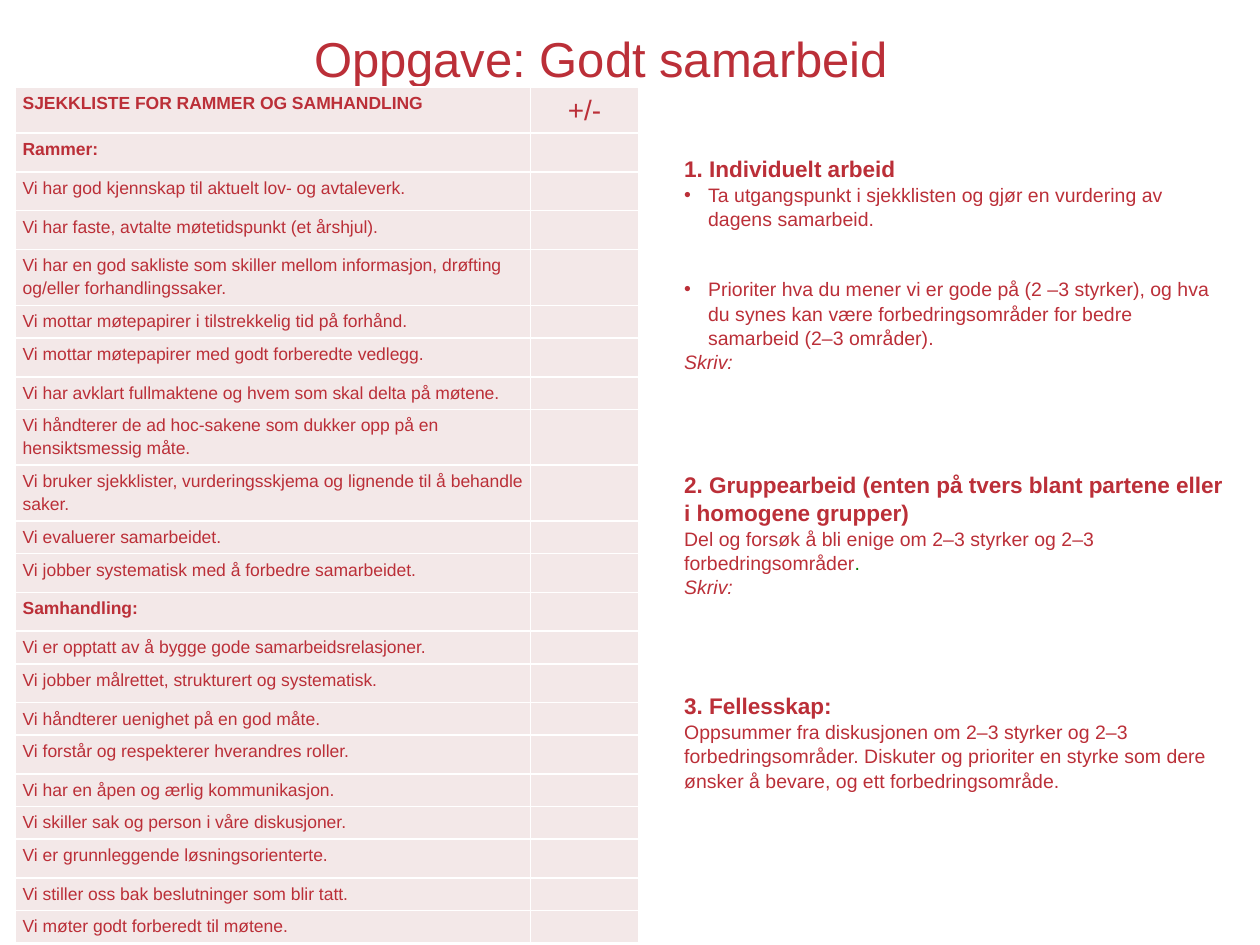
from lxml import etree
from pptx import Presentation, util as u
from pptx.dml.color import RGBColor
from pptx.enum import shapes, text
from pptx.oxml.ns import qn

THEME = {
    "font": "Arial", "red": "BB2F38", "green": "008000",
    "tint": "F3E8E8", "white": "FFFFFF",
    "title": 28, "mark": 16, "head": 12.9, "body": 11.1, "cell": 10,
}

TITLE = "Oppgave: Godt samarbeid"

# Relative row heights
TOP, ROOMY, TIGHT, DOUBLE = 0.34, 0.31, 0.26, 0.41
COLS = (4.09, 0.86)
HIGH = 6.66

# (text, row height, bold)
CHECKS = [
    ("SJEKKLISTE FOR RAMMER OG SAMHANDLING", TOP, True),
    ("Rammer:", ROOMY, True),
    ("Vi har god kjennskap til aktuelt lov- og avtaleverk.", ROOMY, False),
    ("Vi har faste, avtalte møtetidspunkt (et årshjul).", ROOMY, False),
    ("Vi har en god sakliste som skiller mellom informasjon, drøfting "
     "og/eller forhandlingssaker.", DOUBLE, False),
    ("Vi mottar møtepapirer i tilstrekkelig tid på forhånd.", TIGHT, False),
    ("Vi mottar møtepapirer med godt forberedte vedlegg.", ROOMY, False),
    ("Vi har avklart fullmaktene og hvem som skal delta på møtene.", TIGHT, False),
    ("Vi håndterer de ad hoc-sakene som dukker opp på en "
     "hensiktsmessig måte.", DOUBLE, False),
    ("Vi bruker sjekklister, vurderingsskjema og lignende til å behandle "
     "saker.", DOUBLE, False),
    ("Vi evaluerer samarbeidet.", TIGHT, False),
    ("Vi jobber systematisk med å forbedre samarbeidet.", ROOMY, False),
    ("Samhandling:", ROOMY, True),
    ("Vi er opptatt av å bygge gode samarbeidsrelasjoner.", TIGHT, False),
    ("Vi jobber målrettet, strukturert og systematisk.", ROOMY, False),
    ("Vi håndterer uenighet på en god måte.", TIGHT, False),
    ("Vi forstår og respekterer hverandres roller.", ROOMY, False),
    ("Vi har en åpen og ærlig kommunikasjon.", TIGHT, False),
    ("Vi skiller sak og person i våre diskusjoner.", TIGHT, False),
    ("Vi er grunnleggende løsningsorienterte.", ROOMY, False),
    ("Vi stiller oss bak beslutninger som blir tatt.", TIGHT, False),
    ("Vi møter godt forberedt til møtene.", TIGHT, False),
]

# (kind, space before in points, [(text, colour)])
TASKS = [
    ("head", 0, [("1. Individuelt arbeid", "red")]),
    ("bullet", 0, [("Ta utgangspunkt i sjekklisten og gjør en vurdering av "
                    "dagens samarbeid.", "red")]),
    ("bullet", 26.5, [("Prioriter hva du mener vi er gode på (2 –3 styrker), og "
                       "hva du synes kan være forbedringsområder for bedre "
                       "samarbeid (2–3 områder).", "red")]),
    ("write", 0, [("Skriv:", "red")]),
    ("head", 55, [("2. Gruppearbeid (enten på tvers blant partene eller i "
                   "homogene grupper)", "red")]),
    ("plain", 0, [("Del og forsøk å bli enige om 2–3 styrker og 2–3 "
                   "forbedringsområder", "red"), (".", "green")]),
    ("write", 0, [("Skriv:", "red")]),
    ("head", 53, [("3. Fellesskap:", "red")]),
    ("plain", 0, [("Oppsummer fra diskusjonen om 2–3 styrker og 2–3 "
                   "forbedringsområder. Diskuter og prioriter en styrke som "
                   "dere ønsker å bevare, og ett forbedringsområde.", "red")]),
]


def tone(name):
    return RGBColor.from_string(THEME[name])


def add_run(para, words, size, color="red", bold=False, slant=False):
    run = para.add_run()
    run.text = words
    font = run.font
    font.name, font.size = THEME["font"], u.Pt(THEME[size])
    font.bold, font.italic = bold, slant
    font.color.rgb = tone(color)


def add_bullet(para):
    props = para._p.get_or_add_pPr()
    props.set("marL", str(u.Inches(0.19)))
    props.set("indent", str(-u.Inches(0.19)))
    etree.SubElement(props, qn("a:buFont")).set("typeface", THEME["font"])
    etree.SubElement(props, qn("a:buChar")).set("char", "•")


def add_edges(cell):
    """Draw a white 1 pt line on all four sides, beneath the fill in the XML."""
    props = cell._tc.get_or_add_tcPr()
    for spot, side in enumerate(("a:lnL", "a:lnR", "a:lnT", "a:lnB")):
        line = etree.Element(qn(side), w=str(u.Pt(1)))
        fill = etree.SubElement(line, qn("a:solidFill"))
        etree.SubElement(fill, qn("a:srgbClr")).set("val", THEME["white"])
        props.insert(spot, line)


def fill_cell(cell, words, size="cell", bold=False):
    cell.margin_left = cell.margin_right = u.Inches(0.06)
    cell.margin_top = cell.margin_bottom = u.Inches(0.03)
    cell.fill.solid()
    cell.fill.fore_color.rgb = tone("tint")
    add_edges(cell)
    para = cell.text_frame.paragraphs[0]
    if words:
        para.line_spacing = 1.15
        add_run(para, words, size, bold=bold)
    else:
        end = etree.SubElement(para._p, qn("a:endParaRPr"))
        end.set("sz", str(THEME[size] * 100))
    return para


def add_title(slide):
    box = slide.shapes.add_textbox(0, 0, u.Inches(9), u.Inches(0.92))
    box.left = u.Inches(0.27)
    frame = box.text_frame
    frame.word_wrap = True
    frame.vertical_anchor = text.MSO_ANCHOR.MIDDLE
    para = frame.paragraphs[0]
    para.alignment = text.PP_ALIGN.CENTER
    add_run(para, TITLE, "title")


def add_tasks(slide):
    box = slide.shapes.add_shape(
        shapes.MSO_SHAPE.RECTANGLE,
        u.Inches(5.43), u.Inches(1.22), u.Inches(4.31), u.Inches(5.37))
    box.shadow.inherit = False
    box.fill.solid()
    box.fill.fore_color.rgb = tone("white")
    box.line.fill.background()
    frame = box.text_frame
    frame.word_wrap = True
    frame.vertical_anchor = text.MSO_ANCHOR.TOP
    frame.margin_left = frame.margin_right = 0
    frame.margin_top = frame.margin_bottom = 0
    for spot, (kind, gap, runs) in enumerate(TASKS):
        para = frame.add_paragraph() if spot else frame.paragraphs[0]
        para.alignment = text.PP_ALIGN.LEFT
        para.line_spacing = 1.04
        if gap:
            para.space_before = u.Pt(gap)
        if kind == "bullet":
            add_bullet(para)
        size = "head" if kind == "head" else "body"
        for words, color in runs:
            add_run(para, words, size, color, kind == "head", kind == "write")


def add_checks(slide):
    table = slide.shapes.add_table(
        len(CHECKS), len(COLS), u.Inches(0.12), u.Inches(0.69),
        u.Inches(sum(COLS)), u.Inches(HIGH)).table
    table.first_row = table.horz_banding = False
    for col, wide in zip(table.columns, COLS):
        col.width = u.Inches(wide)
    scale = HIGH / sum(high for _, high, _ in CHECKS)
    for spot, (words, high, bold) in enumerate(CHECKS):
        table.rows[spot].height = u.Inches(high * scale)
        fill_cell(table.cell(spot, 0), words, bold=bold)
        if spot:
            fill_cell(table.cell(spot, 1), "")
        else:
            mark = fill_cell(table.cell(spot, 1), "+/-", "mark")
            mark.alignment = text.PP_ALIGN.CENTER


def main():
    deck = Presentation()
    deck.slide_width, deck.slide_height = u.Inches(10), u.Inches(7.5)
    slide = deck.slides.add_slide(deck.slide_layouts[6])
    add_title(slide)
    add_tasks(slide)
    add_checks(slide)
    deck.save("out.pptx")


if __name__ == "__main__":
    main()
